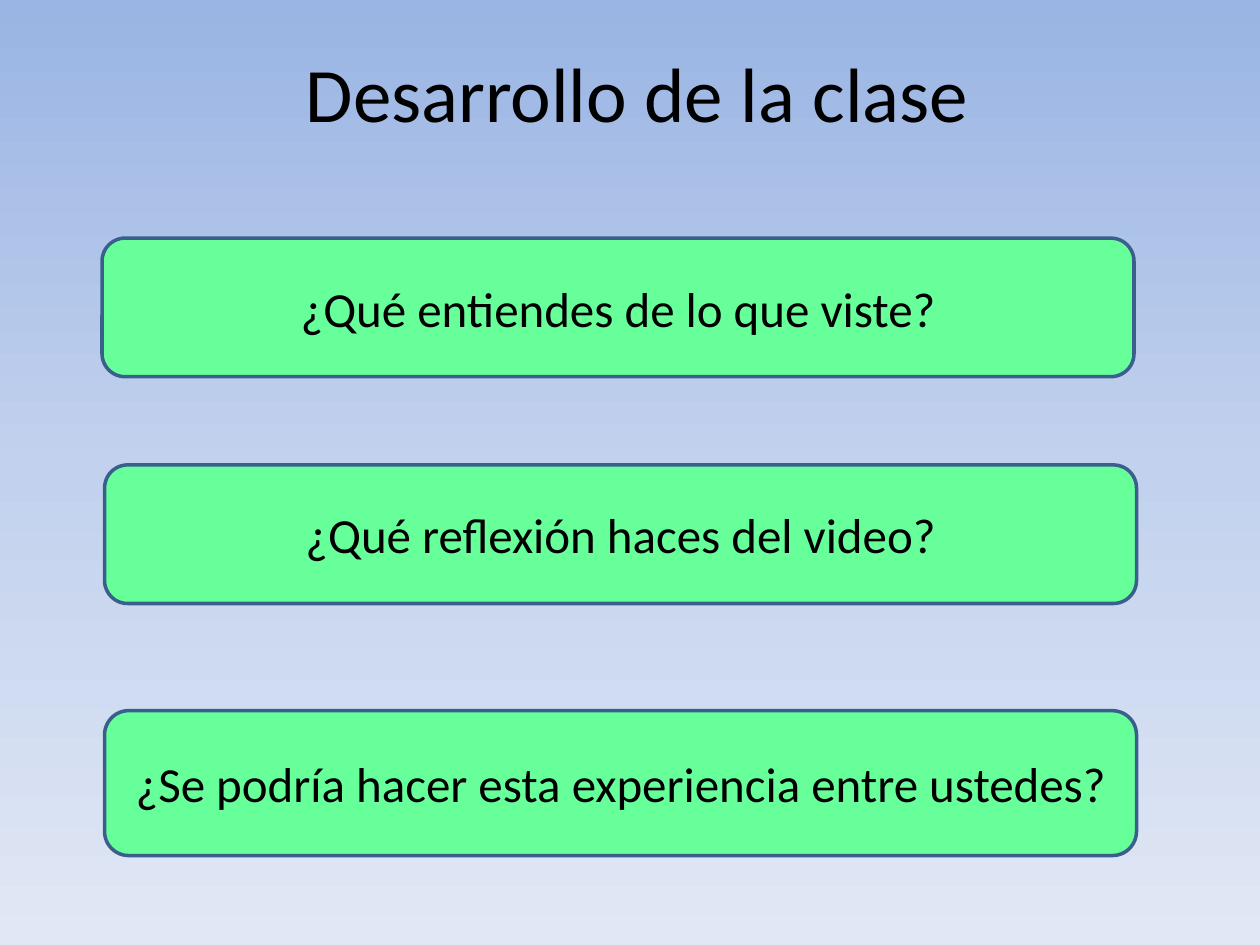
import copy

import pptx
import pptx.dml.color
import pptx.enum.shapes
import pptx.enum.text
import pptx.oxml.ns
import pptx.util

Inches = pptx.util.Inches

# Content
TITLE = "Desarrollo de la clase"
TITLE_BOX = (0.81, 0.26, 8.5, 0.93)
QUESTION_WIDTH = 8.19
QUESTIONS = [  # text, left, top, height
    ("¿Qué entiendes de lo que viste?", 0.81, 1.89, 1.1),
    ("¿Qué reflexión haces del video?", 0.83, 3.69, 1.1),
    ("¿Se podría hacer esta experiencia entre ustedes?", 0.83, 5.64, 1.15),
]
COLORS = {"text": "000000", "card": "66FF99", "border": "3A5F8C"}
BACKGROUND = [(0, "9AB5E4"), (0.5, "C2D1ED"), (1, "E1E8F5")]


def rgb(value):
    return pptx.dml.color.RGBColor.from_string(value)


def write(shape, text, size):
    frame = shape.text_frame
    frame.word_wrap = True
    frame.vertical_anchor = pptx.enum.text.MSO_ANCHOR.MIDDLE
    paragraph = frame.paragraphs[0]
    paragraph.text = text
    paragraph.alignment = pptx.enum.text.PP_ALIGN.CENTER
    paragraph.font.name = "Calibri"
    paragraph.font.size = pptx.util.Pt(size)
    paragraph.font.color.rgb = rgb(COLORS["text"])


def paint_background(slide):
    fill = slide.background.fill
    fill.gradient()
    fill.gradient_angle = 270  # counter-clockwise: runs from top to bottom
    # A new gradient has two stops; the middle one is added
    stop_list = next(slide.element.iter(pptx.oxml.ns.qn("a:gsLst")))
    stop_list.insert(1, copy.deepcopy(stop_list[0]))
    for stop, (position, color) in zip(fill.gradient_stops, BACKGROUND):
        stop.position = position
        stop.color.rgb = rgb(color)


def add_question(slide, text, left, top, height):
    card = slide.shapes.add_shape(
        pptx.enum.shapes.MSO_SHAPE.ROUNDED_RECTANGLE,
        Inches(left), Inches(top), Inches(QUESTION_WIDTH), Inches(height))
    card.shadow.inherit = False
    card.fill.solid()
    card.fill.fore_color.rgb = rgb(COLORS["card"])
    card.line.color.rgb = rgb(COLORS["border"])
    card.line.width = pptx.util.Pt(2)
    write(card, text, 28)


def main():
    deck = pptx.Presentation()
    deck.slide_width, deck.slide_height = Inches(10), Inches(7.5)
    slide = deck.slides.add_slide(deck.slide_layouts[6])
    paint_background(slide)

    # Title
    title = slide.shapes.add_textbox(*map(Inches, TITLE_BOX))
    write(title, TITLE, 44)

    # Questions
    for question in QUESTIONS:
        add_question(slide, *question)

    deck.save("out.pptx")


if __name__ == "__main__":
    main()
